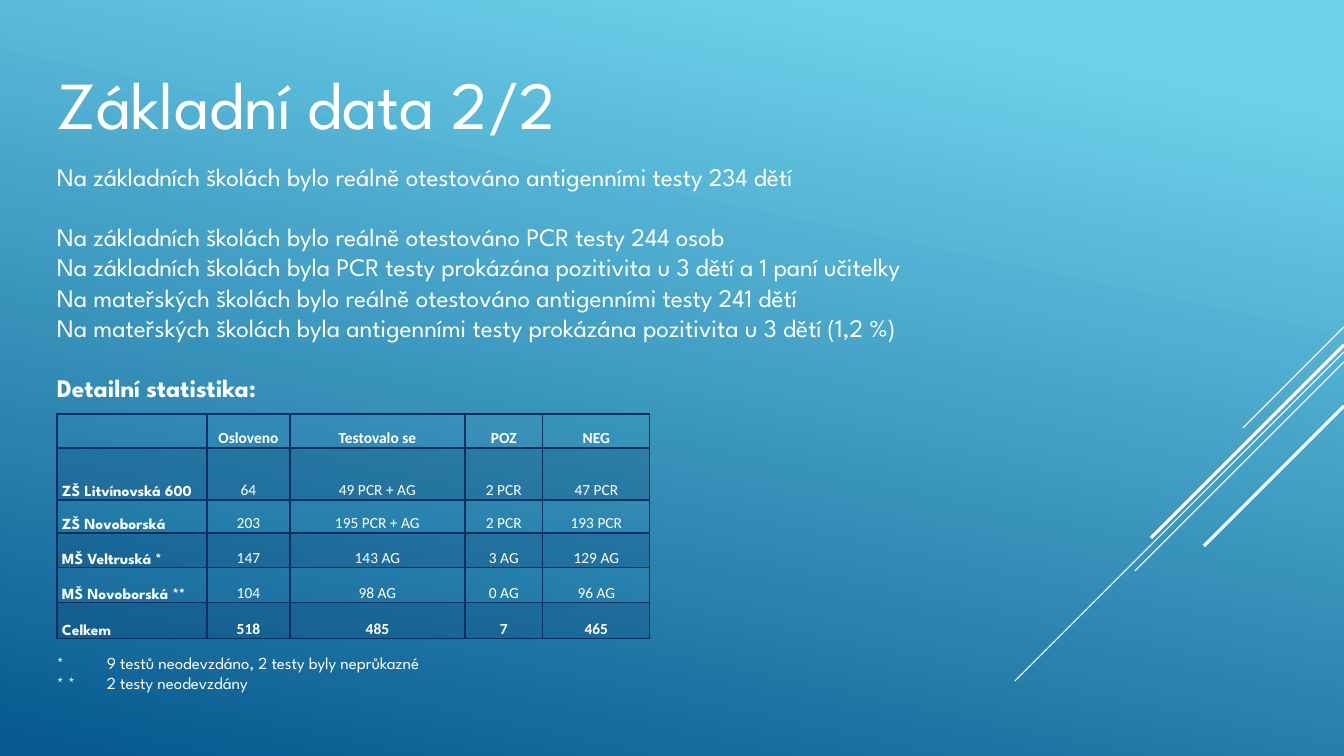
"""Builds the slide "Základní data 2/2" with its test statistics table."""
from lxml import etree
from pptx import Presentation
from pptx.dml.color import RGBColor
from pptx.enum.shapes import MSO_CONNECTOR
from pptx.enum.text import MSO_ANCHOR, MSO_AUTO_SIZE, PP_ALIGN
from pptx.oxml.ns import qn
from pptx.util import Emu, Pt

TITLE = "Základní data 2/2"
FACTS = [
    ("Na základních školách bylo reálně otestováno antigenními testy 234 dětí", False, False),
    ("Na základních školách bylo reálně otestováno PCR testy 244 osob", True, False),
    ("Na základních školách byla PCR testy prokázána pozitivita u 3 dětí a 1 paní učitelky", False, False),
    ("Na mateřských školách bylo reálně otestováno antigenními testy 241 dětí", False, False),
    ("Na mateřských školách byla antigenními testy prokázána pozitivita u 3 dětí (1,2 %)", False, False),
    ("Detailní statistika:", True, True),
]
ROWS = [
    ("", "Osloveno", "Testovalo se", "POZ", "NEG"),
    ("ZŠ Litvínovská 600", "64", "49 PCR + AG", "2 PCR", "47 PCR"),
    ("ZŠ Novoborská", "203", "195 PCR + AG", "2 PCR", "193 PCR"),
    ("MŠ Veltruská *", "147", "143 AG", "3 AG", "129 AG"),
    ("MŠ Novoborská **", "104", "98 AG", "0 AG", "96 AG"),
    ("Celkem", "518", "485", "7", "465"),
]
NOTES = [
    ("*", "9 testů neodevzdáno, 2 testy byly neprůkazné"),
    ("* *", "2 testy neodevzdány"),
]
COL_WIDTHS = (150, 83, 175, 78, 107)
ROW_HEIGHTS = (34, 52, 33, 35, 35, 36)
DIAGONALS = [(327, 101, 0.75), (352, 329, 0.75), (362, 209, 0.75), (345, 193, 2.25), (406, 140, 2.25)]

WIDTH, HEIGHT = 1344, 756
LEFT = 47
NOTE_INDENT = 50
WHITE = RGBColor(0xFF, 0xFF, 0xFF)
SKY = RGBColor(0x6E, 0xD2, 0xEB)
OCEAN = RGBColor(0x06, 0x58, 0x8E)
NAVY = RGBColor(0x05, 0x2F, 0x61)
SPARTAN, CALIBRI = "League Spartan", "Calibri"
STRAIGHT = MSO_CONNECTOR.STRAIGHT
BOTTOM, MIDDLE = MSO_ANCHOR.BOTTOM, MSO_ANCHOR.MIDDLE
GROW = MSO_AUTO_SIZE.SHAPE_TO_FIT_TEXT
PP_LEFT, PP_CENTER = PP_ALIGN.LEFT, PP_ALIGN.CENTER


def px(n):
    return Emu(round(n * 914400 / 100.8))


def style(p, size, font=SPARTAN, bold=False, align=PP_LEFT):
    p.alignment = align
    for r in p.runs:
        r.font.size = Pt(size)
        r.font.name = font
        r.font.bold = bold
        r.font.color.rgb = WHITE


def add_text(slide, x, y, w, h, lines):
    tf = slide.shapes.add_textbox(px(x), px(y), px(w), px(h)).text_frame
    tf.text = "\n".join(lines)
    tf.word_wrap = True
    tf.auto_size = GROW
    return tf.paragraphs


def set_borders(cell, top, bottom):
    tc_pr = cell._tc.get_or_add_tcPr()
    for i, (side, width) in enumerate((("L", 1), ("R", 1), ("T", top), ("B", bottom))):
        ln = etree.Element(qn("a:ln" + side), w=str(Pt(width)))
        fill = etree.SubElement(ln, qn("a:solidFill"))
        etree.SubElement(fill, qn("a:srgbClr"), val=str(NAVY))
        tc_pr.insert(i, ln)


def shade(cell, on):
    if not on:
        cell.fill.background()
        return
    cell.fill.solid()
    cell.fill.fore_color.rgb = NAVY
    color = cell._tc.tcPr.find(".//" + qn("a:srgbClr"))
    etree.SubElement(color, qn("a:alpha"), val="20000")


def add_statistics(slide):
    last = len(ROWS) - 1
    table = slide.shapes.add_table(len(ROWS), len(COL_WIDTHS), px(57), px(414),
                                   px(sum(COL_WIDTHS)), px(sum(ROW_HEIGHTS))).table
    table.first_row = table.horz_banding = False
    for col, w in zip(table.columns, COL_WIDTHS):
        col.width = px(w)
    for i, (row, h) in enumerate(zip(table.rows, ROW_HEIGHTS)):
        row.height = px(h)
        for j, cell in enumerate(row.cells):
            cell.text = ROWS[i][j]
            cell.margin_left = cell.margin_right = px(5)
            cell.margin_top = cell.margin_bottom = 0
            cell.vertical_anchor = BOTTOM
            style(cell.text_frame.paragraphs[0], 11, CALIBRI if j else SPARTAN,
                  j == 0 or i in (0, last), PP_CENTER if j else PP_LEFT)
            shade(cell, i % 2 == 1)
            set_borders(cell, 2 if i == 1 else 1, 2 if i == 0 else 1)


def main():
    prs = Presentation()
    prs.slide_width, prs.slide_height = px(WIDTH), px(HEIGHT)
    slide = prs.slides.add_slide(prs.slide_layouts[5])

    bg = slide.background.fill
    bg.gradient()
    bg.gradient_angle = 258
    for stop, color, position in zip(bg.gradient_stops, (SKY, OCEAN), (0.1, 1)):
        stop.color.rgb = color
        stop.position = position

    for y, length, width in DIAGONALS:
        line = slide.shapes.add_connector(STRAIGHT, px(WIDTH), px(y),
                                          px(WIDTH - length), px(y + length))
        line.line.color.rgb = WHITE
        line.line.width = Pt(width)
        etree.SubElement(line._element.spPr, qn("a:effectLst"))

    title = slide.shapes.title
    title.left, title.top, title.width, title.height = px(LEFT), px(57), px(879), px(92)
    tf = title.text_frame
    tf.text = TITLE
    tf.word_wrap = True
    tf.auto_size = GROW
    tf.vertical_anchor = MIDDLE
    style(tf.paragraphs[0], 48)

    add_statistics(slide)

    facts = add_text(slide, LEFT, 156, 1144, 254, [text for text, _, _ in FACTS])
    for p, (_, gap, bold) in zip(facts, FACTS):
        style(p, 18, bold=bold)
        p.space_before = Pt(21.6 if gap else 0)

    for p in add_text(slide, LEFT, 648, 638, 50, ["\t".join(note) for note in NOTES]):
        style(p, 12)
        p_pr = p._p.get_or_add_pPr()
        p_pr.set("marL", str(px(NOTE_INDENT)))
        p_pr.set("indent", str(-px(NOTE_INDENT)))

    prs.save("out.pptx")


if __name__ == "__main__":
    main()
